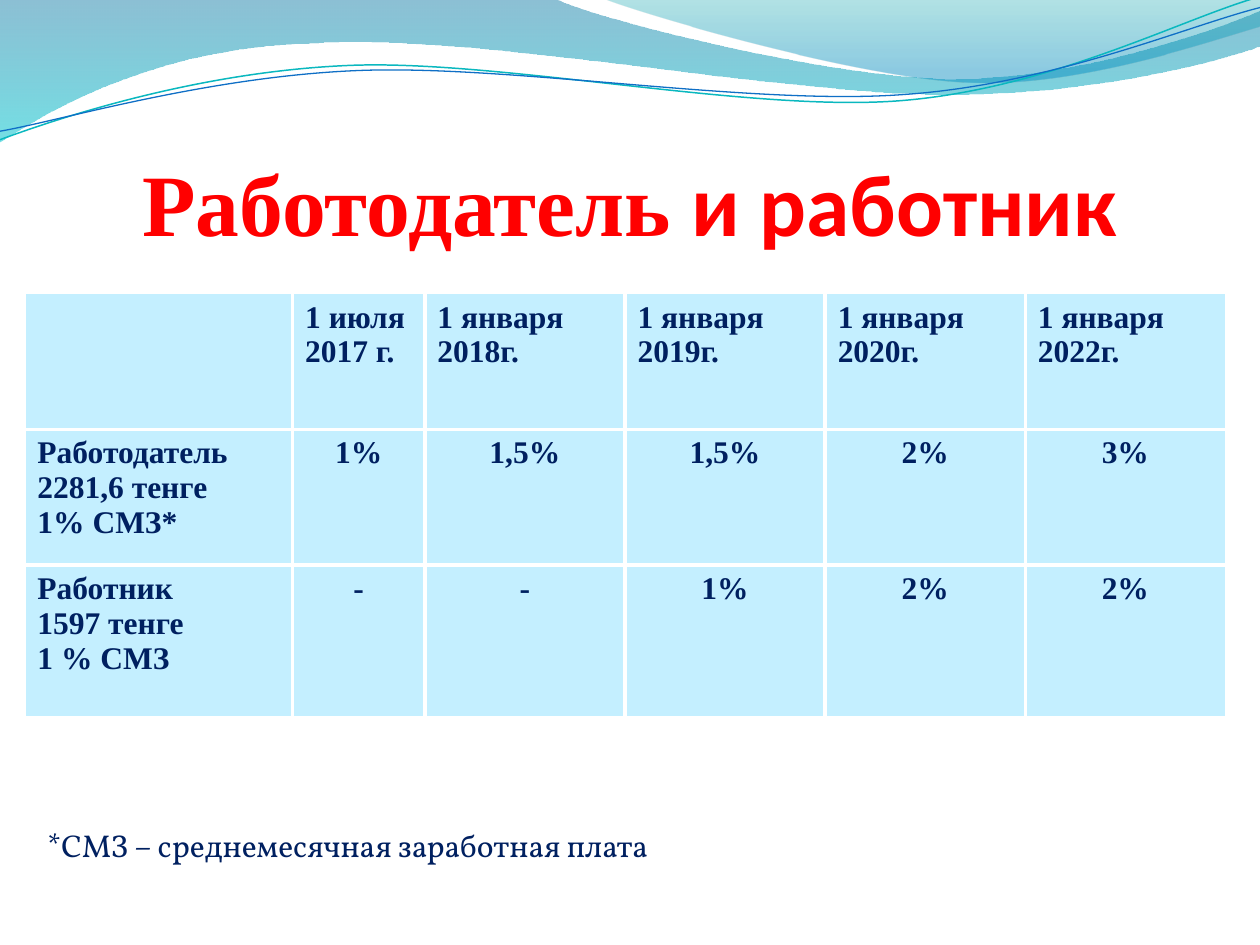
import pptx
import pptx.dml.color
import pptx.enum.text
import pptx.oxml
import pptx.oxml.ns
import pptx.util
from lxml import etree

Pt = pptx.util.Pt
qn = pptx.oxml.ns.qn
ALIGN = pptx.enum.text.PP_ALIGN
ANCHOR = pptx.enum.text.MSO_ANCHOR
SERIF = "Times New Roman"

COLORS = {
    "title": "FF0000", "text": "002060", "cell": "C4EFFF", "border": "FFFFFF",
    "wave_blue": "0074A1", "wave_cyan": "00C6CF",
    "crest_teal": "00A1A9", "crest_blue": "008BBF",
    "line_teal": "0AB8BF", "line_blue": "0F6FC6",
}

# Outlines in points: a pair is a straight segment's end,
# six numbers are a cubic curve's two controls and end.
WAVE = [
    (0, 0), (317, -0.7),
    (343, 12, 478, 45, 546, 45), (614, 45, 690, 19, 720, 6), (720.7, 26),
    (708, 32, 626, 55, 537, 54), (447, 54, 275, 20, 185, 24.5),
    (93, 26, 33, 60, -0.7, 81.4),
]
CREST = [
    (345, -0.7), (366, 8, 491, 44.6, 553.7, 46.8),
    (616, 49.7, 692, 23, 720, 15), (720, 0),
]
TEAL_LINE = [
    (-1.4, 62.9), (33.8, 51.7, 114.1, 29.4, 199.8, 29.9),
    (284.9, 30.3, 425.8, 67.3, 512.4, 64.9),
    (599, 62.4, 676.5, 25.7, 720.2, 15.5),
]
BLUE_LINE = [
    (-1.1, 58), (32.9, 53.8, 118.2, 32.5, 204.1, 33),
    (290.6, 33.4, 428.9, 63.8, 515.5, 61.4),
    (601.3, 59.6, 678.4, 30.1, 721.4, 21.3),
]
LINE_ROTATION = 357.3

COLUMN_WIDTHS = [153, 75.6] + [114.4] * 4
ROW_HEIGHTS = [77.5, 77.5, 86.5]
ROWS = [
    [[], ["1 июля 2017 г."]]
    + [[f"1 января {year}г."] for year in (2018, 2019, 2020, 2022)],
    [["Работодатель", "2281,6 тенге", "1% СМЗ*"],
     ["1%"], ["1,5%"], ["1,5%"], ["2%"], ["3%"]],
    [["Работник", "1597 тенге", "1 % СМЗ"],
     ["-"], ["-"], ["1%"], ["2%"], ["2%"]],
]


def rgb(name):
    return pptx.dml.color.RGBColor.from_string(COLORS[name])


def bend_segments(shape, outline):
    """Join each three straight segments of a curve into one cubic curve."""
    segments = iter(list(shape.element.iter(qn("a:lnTo"))))
    for numbers in outline[1:]:
        first = next(segments)
        if len(numbers) == 2:
            continue
        curve = first.makeelement(qn("a:cubicBezTo"))
        first.addprevious(curve)
        for segment in (first, next(segments), next(segments)):
            curve.append(segment[0])
            segment.getparent().remove(segment)


def add_outline(slide, outline, closed):
    points = [(Pt(numbers[i]), Pt(numbers[i + 1]))
              for numbers in outline for i in range(0, len(numbers), 2)]
    builder = slide.shapes.build_freeform(*points[0])
    builder.add_line_segments(points[1:], close=closed)
    shape = builder.convert_to_shape()
    bend_segments(shape, outline)
    shape.shadow.inherit = False
    return shape


def add_wave(slide, outline, stops):
    """Add a filled wave; each stop is position, colour and opacity percent."""
    shape = add_outline(slide, outline, True)
    shape.line.fill.background()
    shape.fill.gradient()
    shape.fill.gradient_angle = 270
    for stop, (position, color, opacity) in zip(shape.fill.gradient_stops, stops):
        stop.position = position
        stop.color.rgb = rgb(color)
    for element, stop in zip(shape.element.spPr.iter(qn("a:srgbClr")), stops):
        etree.SubElement(element, qn("a:alpha"), val=str(stop[2] * 1000))


def add_curve(slide, outline, color, width):
    shape = add_outline(slide, outline, False)
    shape.rotation = LINE_ROTATION
    shape.fill.background()
    shape.line.color.rgb = rgb(color)
    shape.line.width = Pt(width)


def add_run(paragraph, text, size, font, color, bold=False):
    run = paragraph.add_run()
    run.text = text
    run.font.size = Pt(size)
    run.font.name = font
    run.font.bold = bold
    run.font.color.rgb = rgb(color)


def format_title(title):
    title.left, title.top, title.width, title.height = Pt(36), Pt(55), Pt(648), Pt(90)
    frame = title.text_frame
    frame.auto_size = pptx.enum.text.MSO_AUTO_SIZE.NONE
    frame.vertical_anchor = ANCHOR.BOTTOM
    frame.margin_left = frame.margin_right = frame.margin_bottom = 0
    frame.margin_top = Pt(3.6)
    paragraph = frame.paragraphs[0]
    paragraph.alignment = ALIGN.CENTER
    add_run(paragraph, "Работодатель", 50, SERIF, "title", True)
    add_run(paragraph, " и работник", 50, "Calibri", "title", True)


def add_borders(cell, sides):
    properties = cell._tc.get_or_add_tcPr()
    for side in sides:
        properties.append(pptx.oxml.parse_xml(
            f'<a:ln{side} {pptx.oxml.ns.nsdecls("a")} w="{Pt(2.25)}"><a:solidFill>'
            f'<a:srgbClr val="{COLORS["border"]}"/></a:solidFill></a:ln{side}>'))


def inner_sides(row, column):
    """Return the sides of a cell that touch another cell."""
    touching = {"L": column > 0, "R": column < len(COLUMN_WIDTHS) - 1,
                "T": row > 0, "B": row < len(ROW_HEIGHTS) - 1}
    return [side for side, touches in touching.items() if touches]


def fill_cell(cell, lines, alignment):
    cell.fill.solid()
    cell.fill.fore_color.rgb = rgb("cell")
    frame = cell.text_frame
    for index, line in enumerate(lines):
        paragraph = frame.add_paragraph() if index else frame.paragraphs[0]
        paragraph.alignment = alignment
        add_run(paragraph, line, 18, SERIF, "text", True)


def add_rate_table(slide):
    table = slide.shapes.add_table(
        len(ROW_HEIGHTS), len(COLUMN_WIDTHS), Pt(14.2), Pt(167.8),
        Pt(sum(COLUMN_WIDTHS)), Pt(sum(ROW_HEIGHTS))).table
    for column, width in zip(table.columns, COLUMN_WIDTHS):
        column.width = Pt(width)
    for row_index, (row, height) in enumerate(zip(table.rows, ROW_HEIGHTS)):
        row.height = Pt(height)
        for column_index, lines in enumerate(ROWS[row_index]):
            cell = table.cell(row_index, column_index)
            is_rate = row_index > 0 and column_index > 0
            add_borders(cell, inner_sides(row_index, column_index))
            fill_cell(cell, lines, ALIGN.CENTER if is_rate else ALIGN.LEFT)


def add_footnote(slide):
    frame = slide.shapes.add_textbox(Pt(20), Pt(468.7), Pt(623.5), Pt(29)).text_frame
    frame.word_wrap = True
    add_run(frame.paragraphs[0], "*СМЗ – среднемесячная заработная плата",
            18, "Vollkorn", "text")


def main():
    presentation = pptx.Presentation()
    presentation.slide_width, presentation.slide_height = Pt(720), Pt(540)
    slide = presentation.slides.add_slide(presentation.slide_layouts.get_by_name("Title Only"))
    add_wave(slide, WAVE, [(0, "wave_blue", 45), (1, "wave_cyan", 55)])
    add_wave(slide, CREST, [(0, "crest_teal", 30), (0.8, "crest_blue", 45)])
    add_curve(slide, TEAL_LINE, "line_teal", 0.85)
    add_curve(slide, BLUE_LINE, "line_blue", 0.75)
    format_title(slide.shapes.title)
    add_rate_table(slide)
    add_footnote(slide)
    presentation.save("out.pptx")


if __name__ == "__main__":
    main()
